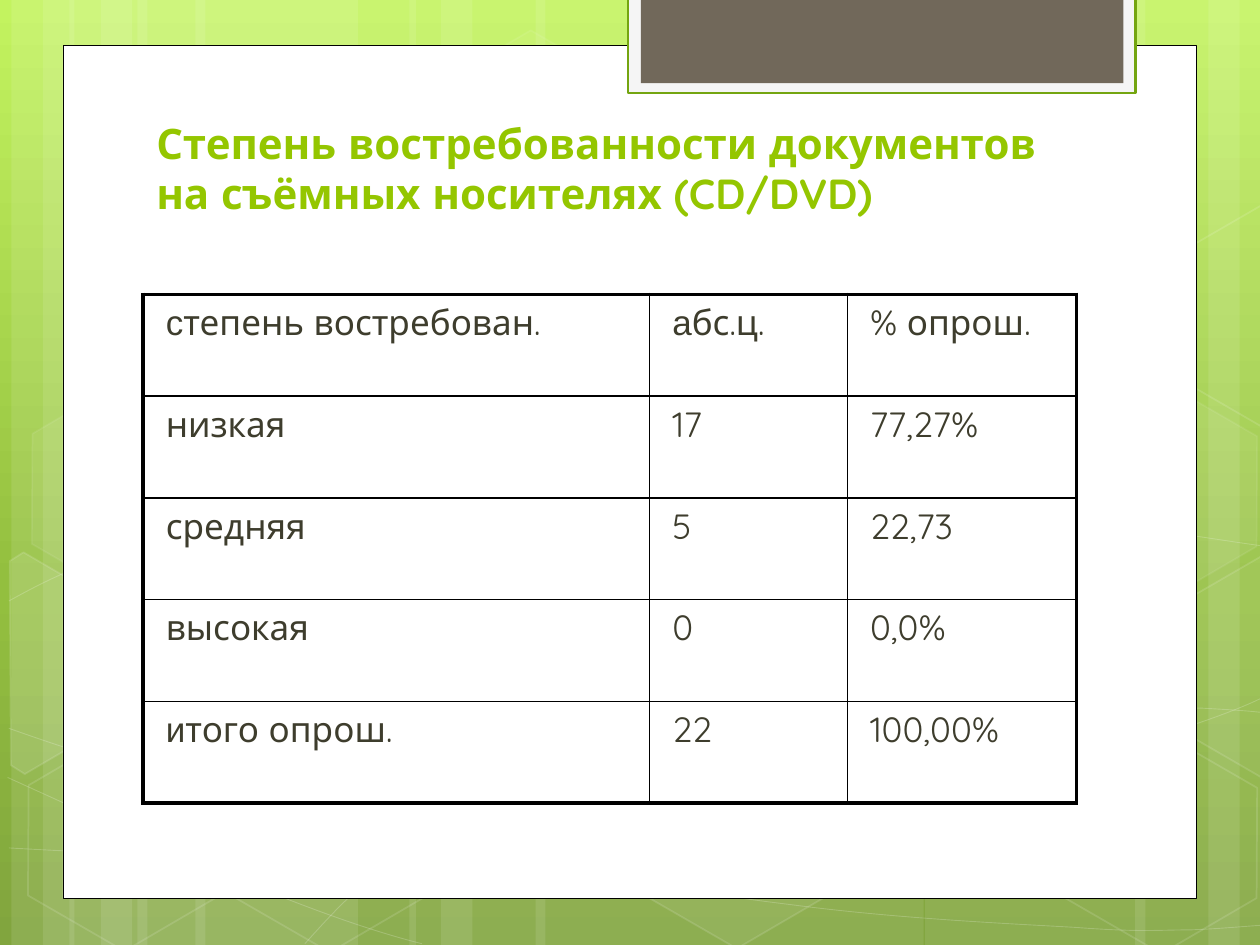
from copy import deepcopy
from dataclasses import dataclass
from math import cos, radians, sin
from typing import NamedTuple

from lxml.etree import SubElement
from pptx import Presentation
from pptx.dml.color import RGBColor
from pptx.enum.shapes import MSO_SHAPE
from pptx.enum.text import MSO_ANCHOR, MSO_AUTO_SIZE, PP_ALIGN
from pptx.oxml.ns import qn
from pptx.util import Inches, Pt


@dataclass(frozen=True)
class Theme:
    """Colours, fonts and type sizes of the slide."""
    white: str = "FFFFFF"
    black: str = "000000"
    green: str = "94C600"
    tab_line: str = "74A510"
    tab_edge: str = "F5F5F5"
    tab: str = "71685A"
    text: str = "3E3D2D"
    sky: tuple = ((0, "C3F35F"), (0.62, "93BF3F"), (1, "81A53E"))
    font: str = "Quicksand"
    lead_font: str = "Arial"
    title_size: float = 24
    cell_size: float = 20
    thin: float = 1
    thick: float = 2.25


class Area(NamedTuple):
    """Place on a grid of 100 columns by 75 rows."""
    column: float
    row: float
    columns: float
    rows: float


class Paint(NamedTuple):
    """Fill and line with their opacity in percent."""
    fill: str | None = None
    fill_opacity: int = 100
    line: str | None = None
    line_width: float = 1
    line_opacity: int = 100


class Stripes(NamedTuple):
    """Start, direction and widest band of a stripe group."""
    origin: float
    direction: int
    widest: float


class Hexagon(NamedTuple):
    """Corner of a tilted hexagon and its opacities."""
    column: float
    row: float
    fill_opacity: int
    line_opacity: int


class CutHexagon(NamedTuple):
    """Tilted hexagon cut by the slide's edge, with its centre."""
    points: tuple
    centre: tuple
    fill_opacity: int


class Entry(NamedTuple):
    """Cell text with an optional first letter in the lead font."""
    rest: str
    lead: str = ""


THEME = Theme()
CELL = Inches(10) // 100
TILT = 30
STRIPE_GROUPS = (Stripes(0.9, 1, 17.5), Stripes(5.5, 1, 17.5), Stripes(100.9, -1, 17.5), Stripes(32.5, 1, 30.8))
CURVES = (
    ((0.7, 67.3), (6.1, 67.6), (11.5, 67.9), (19, 67.8), (26.5, 67.7), (35.8, 67.5), (45.8, 66.5),
     (55.8, 65.5), (70, 63.6), (79.2, 61.7), (88.3, 59.8), (97.7, 56.8), (100.7, 55.1)),
    ((0.7, 47.7), (3.6, 46.1), (6.5, 44.6), (12.1, 43.1), (17.8, 41.6), (25.9, 39.4), (34.7, 38.7),
     (43.6, 38), (54.4, 37.9), (65.4, 38.7), (76.4, 39.5), (94.7, 42.6), (100.7, 43.4)),
    ((0.6, 61.7), (12.7, 67.2), (24.7, 72.7), (33.5, 74.9)),
    ((0.7, 57.8), (3.8, 58.9), (7, 60), (12.8, 61.6), (18.6, 63.1), (27.3, 65.6), (35.7, 67.3),
     (44, 69), (54.5, 70.8), (62.8, 71.8), (71.1, 72.9), (80, 73.3), (85.3, 73.6),
     (90.6, 74), (91.9, 73.8), (94.5, 73.8), (97.1, 73.7), (98.9, 73.5), (100.7, 73.4)),
    ((24.2, 74.9), (26, 72.9), (27.8, 70.9), (30.2, 69.1), (32.6, 67.2), (36, 65.3), (38.8, 63.9),
     (41.6, 62.5), (43.3, 61.9), (46.9, 60.9), (50.6, 59.9), (57.3, 58.5), (60.8, 57.8),
     (64.4, 57.1), (64.9, 57.1), (68, 56.9), (71.1, 56.6), (76, 56.3), (79.4, 56.2),
     (82.9, 56.1), (88.6, 56.2), (88.6, 56.2), (90.8, 56.2), (93.1, 56.2), (95.3, 56.2),
     (97.1, 56.3), (98.8, 56.4), (99.7, 56.5), (100.6, 56.6), (100.3, 56.5), (100.6, 56.6)),
)
HEXAGONS = (
    Hexagon(33.4, 3.6, 4, 8), Hexagon(49.7, 58.9, 6, 12), Hexagon(1.1, 59.1, 0, 12),
    Hexagon(1.4, 31.2, 7, 8), Hexagon(17.4, 59.2, 0, 12), Hexagon(75.3, 45.3, 10, 12),
    Hexagon(83.4, 59.3, 0, 12), Hexagon(83.4, 31.4, 7, 8),
)
LEFT_CUT = ((0.8, 44.5), (1.9, 43.8), (9.6, 48.3), (9.5, 57), (2, 61.4), (0.9, 60.7))
RIGHT_CUT = ((92.6, 48.5), (100.2, 44.1), (100.9, 44.6), (100.9, 61.3), (100.2, 61.7), (92.6, 57.3))
RIGHT_STEP = 27.85
CUT_HEXAGONS = (
    CutHexagon(LEFT_CUT, (3.6, 53.6), 10),
    CutHexagon(RIGHT_CUT, (98.5, 52), 4),
    CutHexagon(tuple((x, y - RIGHT_STEP) for x, y in RIGHT_CUT), (98.5, 52 - RIGHT_STEP), 0),
)
TITLE = "Степень востребованности документов на съёмных носителях (CD/DVD)"
COLUMNS = (40.2, 15.7, 18.2)
ROWS = (
    (Entry("тепень востребован.", "с"), Entry("бс.ц.", "а"), Entry("% опрош.")),
    (Entry("низкая"), Entry("17"), Entry("77,27%")),
    (Entry("средняя"), Entry("5"), Entry("22,73")),
    (Entry("высокая"), Entry("0"), Entry("0,0%")),
    (Entry("того опрош.", "и"), Entry("22"), Entry("100,00%")),
)


def grid(amount: float) -> int:
    """Turn grid cells into a length."""
    return round(amount * CELL)


def set_colour(fill, colour: str, opacity: int = 100) -> None:
    """Apply a solid colour with the given opacity."""
    fill.solid()
    fill.fore_color.rgb = RGBColor.from_string(colour)
    if opacity < 100:
        for node in fill._xPr.iter(qn("a:srgbClr")):
            SubElement(node, qn("a:alpha"), val=str(opacity * 1000))


def paint_shape(shape, paint: Paint) -> None:
    """Apply fill and line to a shape."""
    shape.shadow.inherit = False
    shape.fill.background()
    shape.line.fill.background()
    if paint.fill and paint.fill_opacity:
        set_colour(shape.fill, paint.fill, paint.fill_opacity)
    if paint.line:
        set_colour(shape.line.fill, paint.line, paint.line_opacity)
        shape.line.width = Pt(paint.line_width)


def draw_preset(slide, kind: MSO_SHAPE, area: Area, paint: Paint):
    """Draw a preset shape on the grid."""
    shape = slide.shapes.add_shape(kind, *map(grid, area))
    paint_shape(shape, paint)
    return shape


def draw_outline(slide, points, paint: Paint, close: bool):
    """Draw a freeform through grid points."""
    first, *others = [tuple(map(grid, point)) for point in points]
    builder = slide.shapes.build_freeform(*first)
    builder.add_line_segments(others, close=close)
    shape = builder.convert_to_shape()
    paint_shape(shape, paint)
    return shape


def draw_curve(slide, knots) -> None:
    """Draw chained cubic curves through their control points."""
    paint = Paint(line=THEME.white, line_width=0.5, line_opacity=20)
    shape = draw_outline(slide, knots, paint, close=False)
    outline = next(shape._element.iter(qn("a:path")))
    segments = outline.findall(qn("a:lnTo"))
    for first in range(0, len(segments), 3):
        curve = SubElement(outline, qn("a:cubicBezTo"))
        for segment in segments[first:first + 3]:
            curve.append(segment[0])
            outline.remove(segment)


def draw_cut_hexagon(slide, item: CutHexagon) -> None:
    """Draw a cut hexagon upright and tilt it about its centre."""
    turn, (middle, level) = radians(-TILT), item.centre
    upright = [(middle + (x - middle) * cos(turn) - (y - level) * sin(turn),
                level + (x - middle) * sin(turn) + (y - level) * cos(turn)) for x, y in item.points]
    paint = Paint(THEME.white, item.fill_opacity, THEME.white, 1, 12)
    draw_outline(slide, upright, paint, close=True).rotation = TILT


def write_text(frame, text: str, *, lead: str = "", size: float, colour: str, bold: bool = False,
               before: float = 0):
    """Write one paragraph and return it."""
    para = frame.paragraphs[0]
    para.alignment = PP_ALIGN.LEFT
    para.space_before = Pt(before)
    for part, font in ((lead, THEME.lead_font), (text, THEME.font)):
        if part:
            span = para.add_run()
            span.text = part
            span.font.name, span.font.size, span.font.bold = font, Pt(size), bold
            span.font.color.rgb = RGBColor.from_string(colour)
    return para


def draw_background(slide) -> None:
    """Draw the gradient, stripes, curves and hexagons."""
    fill = slide.background.fill
    fill.gradient()
    fill.gradient_angle = 270
    first = next(slide._element.iter(qn("a:gs")))
    first.addnext(deepcopy(first))
    for stop, (position, colour) in zip(fill.gradient_stops, THEME.sky):
        stop.position, stop.color.rgb = position, RGBColor.from_string(colour)
    for group in STRIPE_GROUPS:
        for offset, width in ((10, group.widest), (0, 5), (2.5, 8.3)):
            left = group.origin + (offset if group.direction > 0 else -offset - width)
            draw_preset(slide, MSO_SHAPE.RECTANGLE, Area(left, 0, width, 75), Paint(THEME.white, 10))
    for knots in CURVES:
        draw_curve(slide, knots)
    for item in HEXAGONS:
        paint = Paint(THEME.white, item.fill_opacity, THEME.white, 1, item.line_opacity)
        shape = draw_preset(slide, MSO_SHAPE.HEXAGON, Area(item.column, item.row, 17.5, 15.2), paint)
        shape.adjustments[0] = 0.285
        shape.rotation = TILT
    for item in CUT_HEXAGONS:
        draw_cut_hexagon(slide, item)


def draw_panel(slide) -> None:
    """Draw the white page and its tab."""
    for area, paint in (
        (Area(5, 3.6, 90, 67.7), Paint(THEME.white, line=THEME.black, line_width=0.5)),
        (Area(49.87, -0.2, 40.25, 7.6), Paint(THEME.tab_edge, line=THEME.tab_line, line_width=1.25)),
        (Area(50.87, -0.2, 38.3, 6.8), Paint(THEME.tab)),
    ):
        draw_preset(slide, MSO_SHAPE.RECTANGLE, area, paint)


def place_title(slide) -> None:
    """Format the title placeholder above the panel."""
    title = slide.shapes.title
    slide.shapes._spTree.append(title._element)
    title.left, title.top, title.width, title.height = map(grid, Area(11.4, 11.2, 76.8, 6.6))
    frame = title.text_frame
    frame.word_wrap, frame.auto_size = True, MSO_AUTO_SIZE.NONE
    frame.vertical_anchor = MSO_ANCHOR.BOTTOM
    write_text(frame, TITLE, size=THEME.title_size, colour=THEME.green, bold=True)


def draw_border(cell, side: str, width: float) -> None:
    """Draw one border of a table cell."""
    line = SubElement(cell._tc.get_or_add_tcPr(), qn(f"a:ln{side}"), w=str(Pt(width)))
    SubElement(SubElement(line, qn("a:solidFill")), qn("a:srgbClr"), val=THEME.black)


def draw_table(slide) -> None:
    """Draw the demand table with a thick outer frame."""
    area = Area(11.36, 23.35, sum(COLUMNS), 40.4)
    table = slide.shapes.add_table(len(ROWS), len(COLUMNS), *map(grid, area)).table
    table.first_row = table.horz_banding = False
    for column, width in zip(table.columns, COLUMNS):
        column.width = grid(width)
    for r, entries in enumerate(ROWS):
        for c, entry in enumerate(entries):
            cell = table.cell(r, c)
            outer = {"L": c == 0, "R": c == len(COLUMNS) - 1, "T": r == 0, "B": r == len(ROWS) - 1}
            for side, is_outer in outer.items():
                draw_border(cell, side, THEME.thick if is_outer else THEME.thin)
            cell.fill.background()
            para = write_text(cell.text_frame, entry.rest, lead=entry.lead, size=THEME.cell_size,
                              colour=THEME.text, before=4)
            para._p.get_or_add_pPr().set("marL", str(grid(0.8)))


def main() -> None:
    """Build and save the deck."""
    deck = Presentation()
    deck.slide_width, deck.slide_height = grid(100), grid(75)
    slide = deck.slides.add_slide(deck.slide_layouts[5])
    draw_background(slide)
    draw_panel(slide)
    place_title(slide)
    draw_table(slide)
    deck.save("out.pptx")


if __name__ == "__main__":
    main()
